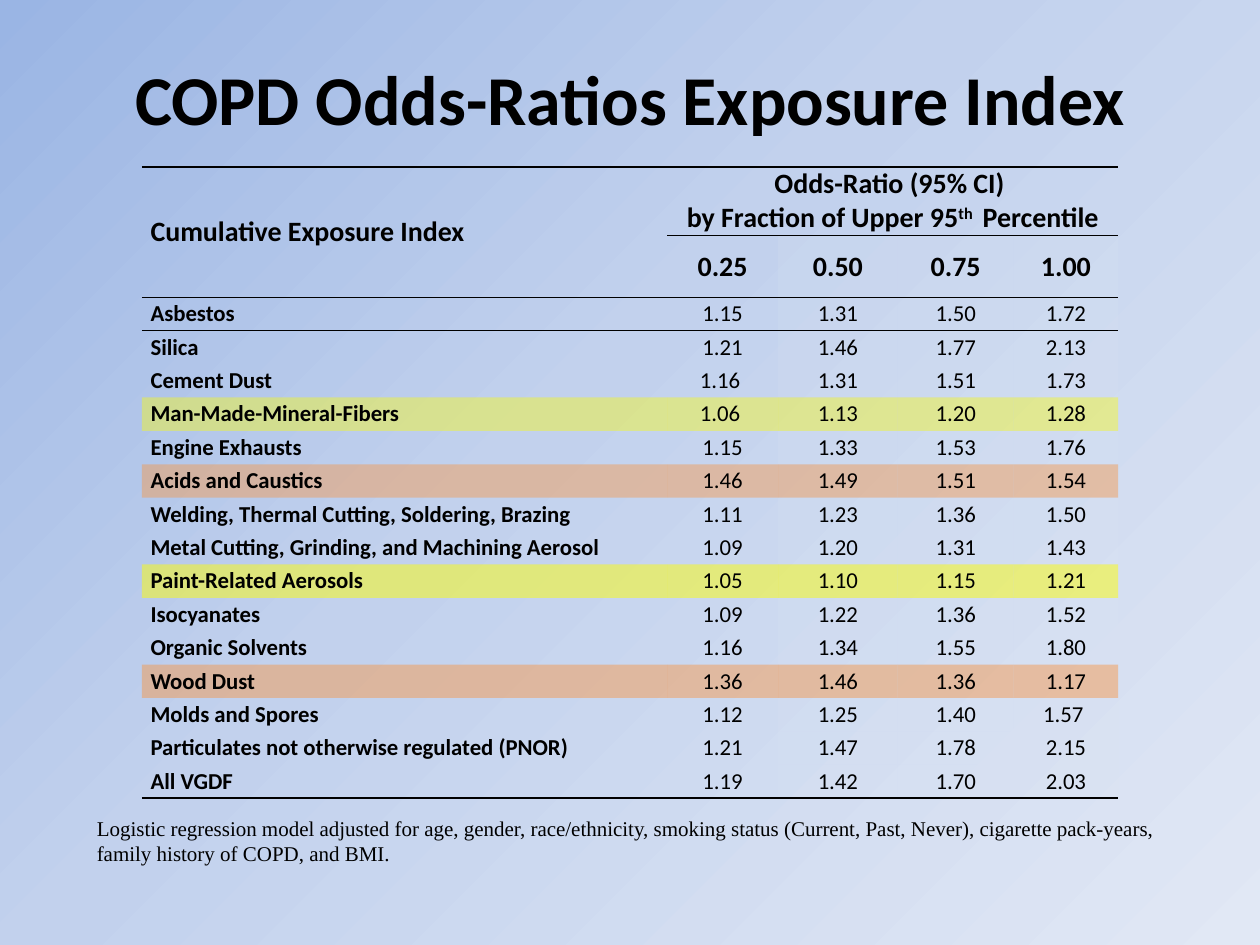
import pptx
import pptx.util
import pptx.dml.color
import pptx.enum.text
import pptx.oxml
import pptx.oxml.ns
from dataclasses import dataclass
from lxml import etree

ALIGN = pptx.enum.text.PP_ALIGN
ANCHOR = pptx.enum.text.MSO_ANCHOR
qn = pptx.oxml.ns.qn


@dataclass
class Theme:
    ink: str = "000000"
    tint: tuple = ("DCE6F2", 16)
    background: tuple = ((0, "9AB5E4"), (44, "C2D1ED"), (100, "E1E8F5"))
    sans: str = "Calibri"
    serif: str = "Times New Roman"
    title: int = 40
    header: int = 16
    body: int = 13
    note: int = 12
    rule: int = 1


class Slide:
    """Style and current slide; lengths are units of a 20 x 15 grid."""
    UNIT = pptx.util.Inches(0.5)

    def __init__(self, prs, theme):
        self.t = theme
        self.s = prs.slides.add_slide(prs.slide_layouts[6])

    def units(self, *values):
        return [round(v * self.UNIT) for v in values]

    def background(self):
        fill = self.s.background.fill
        fill.gradient()
        grad = self.s.background._cSld.find(".//" + qn("a:gradFill"))
        stops = grad.find(qn("a:gsLst"))
        for gs in list(stops):
            stops.remove(gs)
        for pos, color in self.t.background:
            gs = etree.SubElement(stops, qn("a:gs"), pos=str(pos * 1000))
            etree.SubElement(gs, qn("a:srgbClr"), val=color)
        grad.find(qn("a:lin")).set("ang", str(45 * 60000))

    def add_lines(self, tf, lines, size, font, bold=False, align=ALIGN.LEFT):
        """Each line is a list of (text, superscript percent) runs."""
        for i, line in enumerate(lines):
            p = tf.add_paragraph() if i else tf.paragraphs[0]
            p.alignment = align
            for text, raised in line:
                r = p.add_run()
                r.text = text
                r.font.size = pptx.util.Pt(size)
                r.font.name = font
                r.font.bold = bold
                r.font.color.rgb = pptx.dml.color.RGBColor.from_string(self.t.ink)
                if raised:
                    r._r.get_or_add_rPr().set("baseline", str(raised * 1000))

    def text(self, box, text, size, font, bold=False, align=ALIGN.LEFT, anchor=ANCHOR.TOP):
        tf = self.s.shapes.add_textbox(*self.units(*box)).text_frame
        tf.word_wrap = True
        tf.vertical_anchor = anchor
        self.add_lines(tf, [[(text, 0)]], size, font, bold, align)

    def table(self, left, top, cols, rows):
        box = self.units(left, top, sum(cols), sum(rows))
        tbl = self.s.shapes.add_table(len(rows), len(cols), *box).table
        tbl.first_row = tbl.horz_banding = False
        style = tbl._tbl.tblPr.find(qn("a:tableStyleId"))
        style.text = "{2D5ABB26-0587-4C30-8999-92F81FD0307C}"
        for col, width in zip(tbl.columns, self.units(*cols)):
            col.width = width
        for row, height in zip(tbl.rows, self.units(*rows)):
            row.height = height
        return tbl

    def cell(self, c, lines, size, bold, align=ALIGN.CENTER, anchor=ANCHOR.MIDDLE):
        c.margin_left = c.margin_right = pptx.util.Inches(0.07)
        c.margin_top = c.margin_bottom = 0
        c.vertical_anchor = anchor
        self.add_lines(c.text_frame, lines, size, self.t.sans, bold, align)

    def shade(self, c, color, alpha):
        c.fill.solid()
        c.fill.fore_color.rgb = pptx.dml.color.RGBColor.from_string(color)
        clr = c._tc.tcPr.find(".//" + qn("a:srgbClr"))
        etree.SubElement(clr, qn("a:alpha"), val=str(alpha * 1000))

    def border(self, c, sides):
        tcPr = c._tc.get_or_add_tcPr()
        for i, side in enumerate(sides):
            ln = etree.Element(qn("a:ln" + side), w=str(pptx.util.Pt(self.t.rule)))
            fill = etree.SubElement(ln, qn("a:solidFill"))
            etree.SubElement(fill, qn("a:srgbClr"), val=self.t.ink)
            tcPr.insert(i, ln)


YELLOW, ORANGE = "FFFF00", "F79646"
FRACTIONS = ["0.25", "0.50", "0.75", "1.00"]
EXPOSURES = [
    ("Asbestos", ["1.15", "1.31", "1.50", "1.72"]),
    ("Silica", ["1.21", "1.46", "1.77", "2.13"]),
    ("Cement Dust", ["1.16 ", "1.31", "1.51", "1.73"]),
    ("Man-Made-Mineral-Fibers", ["1.06 ", "1.13", "1.20", "1.28"]),
    ("Engine Exhausts", ["1.15", "1.33", "1.53", "1.76"]),
    ("Acids and Caustics", ["1.46", "1.49", "1.51", "1.54"]),
    ("Welding, Thermal Cutting, Soldering, Brazing", ["1.11", "1.23", "1.36", "1.50"]),
    ("Metal Cutting, Grinding, and Machining Aerosol", ["1.09", "1.20", "1.31", "1.43"]),
    ("Paint-Related Aerosols", ["1.05", "1.10", "1.15", "1.21"]),
    ("Isocyanates", ["1.09", "1.22", "1.36", "1.52"]),
    ("Organic Solvents", ["1.16", "1.34", "1.55", "1.80"]),
    ("Wood Dust", ["1.36", "1.46", "1.36", "1.17"]),
    ("Molds and Spores", ["1.12", "1.25", "1.40", "1.57 "]),
    ("Particulates not otherwise regulated (PNOR)", ["1.21", "1.47", "1.78", "2.15"]),
    ("All VGDF", ["1.19", "1.42", "1.70", "2.03"]),
]
HIGHLIGHTS = {
    "Man-Made-Mineral-Fibers": (YELLOW, 39),
    "Acids and Caustics": (ORANGE, 44),
    "Paint-Related Aerosols": (YELLOW, 48),
    "Wood Dust": (ORANGE, 47),
}


def main():
    prs = pptx.Presentation()
    prs.slide_width, prs.slide_height = pptx.util.Inches(10), pptx.util.Inches(7.5)
    t = Theme()
    s = Slide(prs, t)
    s.background()

    # Title
    s.text((1, 0.6, 18, 1.9), "COPD Odds-Ratios Exposure Index", t.title, t.sans,
           True, ALIGN.CENTER, ANCHOR.MIDDLE)

    # Table header
    tbl = s.table(2.25, 2.65, [8.34, 1.76, 1.9, 1.84, 1.66],
                  [1.09, 0.98] + [0.53] * len(EXPOSURES))
    tbl.cell(0, 0).merge(tbl.cell(1, 0))
    tbl.cell(0, 1).merge(tbl.cell(0, 4))
    s.cell(tbl.cell(0, 0), [[("Cumulative Exposure Index", 0)]], t.header, True, ALIGN.LEFT)
    s.cell(tbl.cell(0, 1), [[("Odds-Ratio (95% CI) ", 0)],
                            [("by Fraction of Upper 95", 0), ("th ", 30), (" Percentile", 0)]],
           t.header, True, anchor=ANCHOR.TOP)
    for j, fraction in enumerate(FRACTIONS, 1):
        s.cell(tbl.cell(1, j), [[(fraction, 0)]], t.header, True)
        if j > 1:
            s.shade(tbl.cell(1, j), *t.tint)

    # Exposure rows
    for i, (name, ratios) in enumerate(EXPOSURES, 2):
        for j, text in enumerate([name] + ratios):
            c = tbl.cell(i, j)
            s.cell(c, [[(text, 0)]], t.body, j == 0, ALIGN.CENTER if j else ALIGN.LEFT)
            if name in HIGHLIGHTS:
                s.shade(c, *HIGHLIGHTS[name])
            elif j > 1:
                s.shade(c, *t.tint)

    # Horizontal rules
    for j in range(len(tbl.columns)):
        s.border(tbl.cell(0, j), "TB" if j else "T")
        s.border(tbl.cell(1, j), "TB" if j else "B")
        s.border(tbl.cell(2, j), "T")
        s.border(tbl.cell(len(EXPOSURES) + 1, j), "B")

    # Footnote
    s.text((1.34, 12.84, 17.34, 1),
           "Logistic regression model adjusted for age, gender, race/ethnicity, smoking status "
           "(Current, Past, Never), cigarette pack-years, family history of COPD, and BMI.",
           t.note, t.serif)
    prs.save("out.pptx")


if __name__ == "__main__":
    main()
